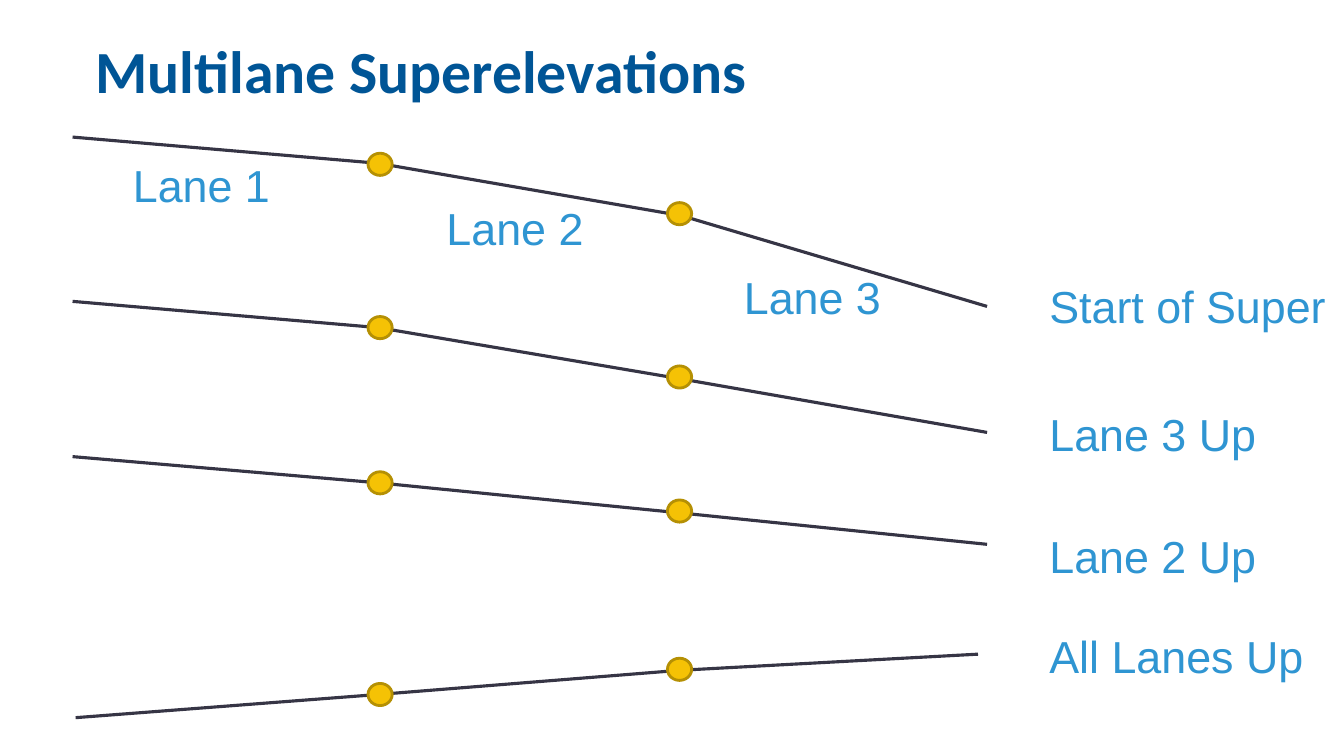
from pptx import Presentation
from pptx.dml.color import RGBColor
from pptx.enum import shapes, text
from pptx.oxml import ns
from pptx.util import Inches, Pt
from lxml import etree

NAVY = RGBColor(0x00, 0x55, 0x96)
BLUE = RGBColor(0x2F, 0x95, 0xD2)
DARK = RGBColor(0x36, 0x35, 0x45)
GOLD = RGBColor(0xF5, 0xC2, 0x05)
RIM = RGBColor(0xB5, 0x90, 0x04)

TITLE = "Multilane Superelevations"
# Each road section: the four ends of its lanes, then the tops of its two dots
ROADS = [
    ([(0.72, 1.36), (3.75, 1.62), (6.76, 2.14), (9.79, 3.04)], (1.52, 2.01)),
    ([(0.72, 2.99), (3.75, 3.25), (6.76, 3.76), (9.79, 4.29)], (3.14, 3.63)),
    ([(0.72, 4.53), (3.75, 4.79), (6.76, 5.09), (9.79, 5.4)], (4.68, 4.96)),
    ([(0.75, 7.12), (3.75, 6.89), (6.74, 6.65), (9.7, 6.49)], (6.78, 6.53)),
]
DOT_X = (3.65, 6.62)
DOT_W, DOT_H = 0.24, 0.22
STAGE_X = 10.31
LABELS = [  # wording, left, top, width
    ("Lane 1", 1.22, 1.52, 1.57),
    ("Lane 2", 4.33, 1.94, 1.57),
    ("Lane 3", 7.28, 2.63, 1.57),
    ("Start of Super", STAGE_X, 2.72, 2.97),
    ("Lane 3 Up", STAGE_X, 3.99, 2.27),
    ("Lane 2 Up", STAGE_X, 5.2, 2.27),
    ("All Lanes Up", STAGE_X, 6.19, 2.74),
]
HEAD = {"name": "Calibri", "size": Pt(42.7), "bold": True}
BODY = {"name": "Arial", "size": Pt(32)}


def style(obj, form):
    for key, val in form.items():
        setattr(obj, key, val)


def add_text(slide, words, box, font, color, frame):
    tf = slide.shapes.add_textbox(*map(Inches, box)).text_frame
    style(tf, frame)
    para = tf.paragraphs[0]
    run = para.add_run()
    run.text = words
    style(run.font, font)
    run.font.color.rgb = color
    return para


def add_lane(slide, start, end):
    line = slide.shapes.add_connector(
        shapes.MSO_CONNECTOR.STRAIGHT, *map(Inches, start + end))
    line.line.color.rgb = DARK
    line.line.width = Pt(2.25)
    etree.SubElement(line._element.spPr, ns.qn("a:effectLst"))


def add_dot(slide, left, top):
    dot = slide.shapes.add_shape(
        shapes.MSO_SHAPE.OVAL, *map(Inches, (left, top, DOT_W, DOT_H)))
    dot.shadow.inherit = False
    dot.fill.solid()
    dot.fill.fore_color.rgb = GOLD
    dot.line.color.rgb = RIM
    dot.line.width = Pt(2)


def main():
    prs = Presentation()
    prs.slide_width, prs.slide_height = Inches(13.33), Inches(7.5)
    slide = prs.slides.add_slide(prs.slide_layouts[6])

    head = add_text(slide, TITLE, (0.85, 0.31, 11.67, 0.89), HEAD, NAVY,
                    {"word_wrap": True,
                     "vertical_anchor": text.MSO_ANCHOR.MIDDLE})
    head.line_spacing = 0.8

    for ends, tops in ROADS:
        for start, end in zip(ends, ends[1:]):
            add_lane(slide, start, end)
        for left, top in zip(DOT_X, tops):
            add_dot(slide, left, top)

    for words, left, top, width in LABELS:
        add_text(slide, words, (left, top, width, 0.64), BODY, BLUE,
                 {"word_wrap": False,
                  "auto_size": text.MSO_AUTO_SIZE.SHAPE_TO_FIT_TEXT})

    prs.save("out.pptx")


if __name__ == "__main__":
    main()
